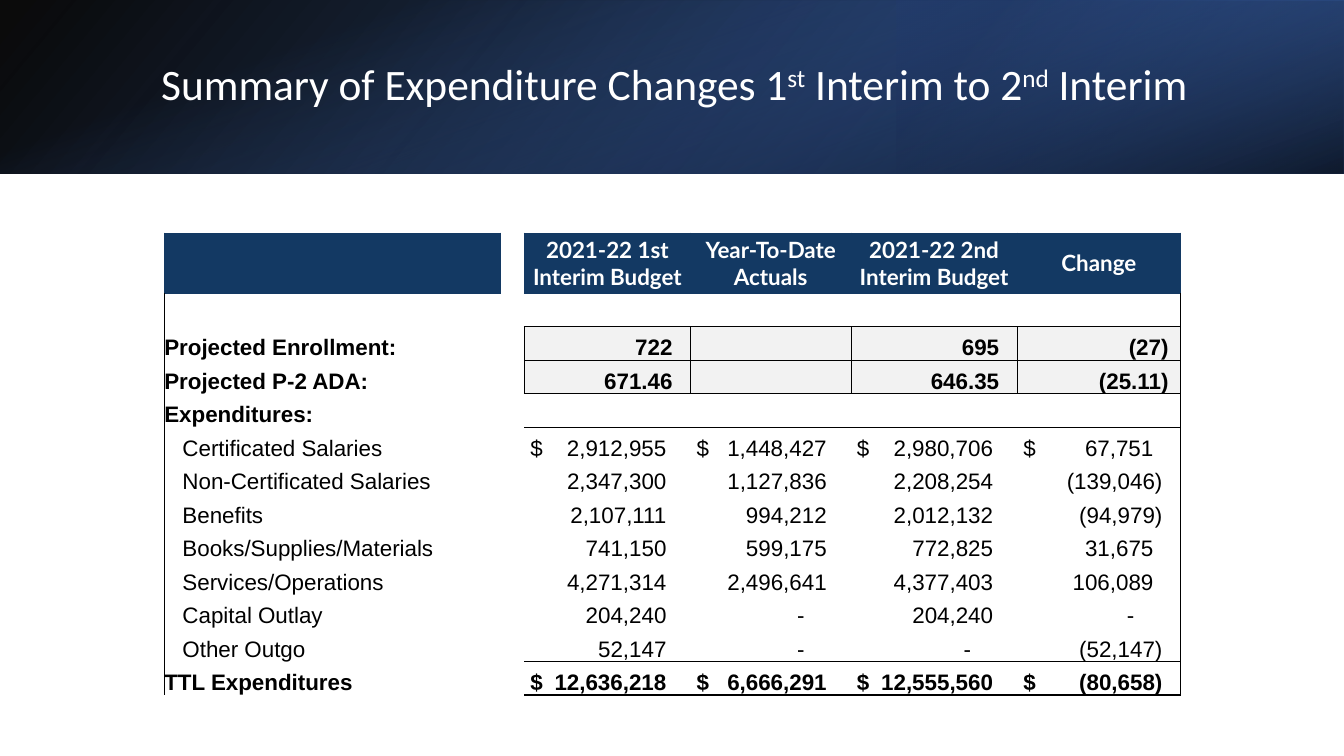
import dataclasses

import pptx
import pptx.dml.color
import pptx.enum.shapes
import pptx.enum.text
import pptx.oxml
import pptx.oxml.ns
import pptx.util

Inches = pptx.util.Inches
ALIGN = pptx.enum.text.PP_ALIGN
ANCHOR = pptx.enum.text.MSO_ANCHOR
NS = pptx.oxml.ns.nsdecls("a")


@dataclasses.dataclass
class Theme:
    navy: str = "133963"
    white: str = "FFFFFF"
    black: str = "000000"
    grey: str = "F2F2F2"
    title_font: str = "Calibri"
    header_font: str = "Lato"
    body_font: str = "Arial"
    title_size: float = 31
    table_size: float = 16
    thin: float = 0.5
    thick: float = 2


COLUMNS = [3.33, 0.24, 1.65, 1.59, 1.65, 1.62]
HEADERS = ["", "", "2021-22 1st Interim Budget", "Year-To-Date Actuals",
           "2021-22 2nd Interim Budget", "Change"]
ROWS = [
    ["", "", "", "", ""],
    ["Projected Enrollment:", "722", "", "695", "(27)"],
    ["Projected P-2 ADA:", "671.46", "", "646.35", "(25.11)"],
    ["Expenditures:", "", "", "", ""],
    ["Certificated Salaries", "$\t2,912,955", "$\t1,448,427", "$\t2,980,706", "$\t67,751"],
    ["Non-Certificated Salaries", "2,347,300", "1,127,836", "2,208,254", "(139,046)"],
    ["Benefits", "2,107,111", "994,212", "2,012,132", "(94,979)"],
    ["Books/Supplies/Materials", "741,150", "599,175", "772,825", "31,675"],
    ["Services/Operations", "4,271,314", "2,496,641", "4,377,403", "106,089"],
    ["Capital Outlay", "204,240", "-", "204,240", "-"],
    ["Other Outgo", "52,147", "-", "-", "(52,147)"],
    ["TTL Expenditures", "$\t12,636,218", "$\t6,666,291", "$\t12,555,560", "$\t(80,658)"],
]
BOXED_ROWS = (2, 3)
DETAIL_ROWS = range(5, 12)
TOTAL_ROW = len(ROWS)
DOLLAR_INSET = 0.06


def write(tf, text, size, font, color, bold=False, align=ALIGN.LEFT, spacing=None, tab=None):
    """Fill the first paragraph; parts between carets become superscript."""
    p = tf.paragraphs[0]
    p.alignment = align
    if spacing:
        p.line_spacing = spacing
    if tab:
        p._p.get_or_add_pPr().append(pptx.oxml.parse_xml(
            f'<a:tabLst {NS}><a:tab pos="{Inches(tab)}" algn="r"/></a:tabLst>'))
    for i, part in enumerate(text.split("^")):
        r = p.add_run()
        r.text = part
        r.font.size = pptx.util.Pt(size)
        r.font.name = font
        r.font.bold = bold
        r.font.color.rgb = pptx.dml.color.RGBColor.from_string(color)
        if i % 2:
            r._r.get_or_add_rPr().set("baseline", "30000")


def number_inset(text, row, col):
    """Right margin that lines digits up as in accounting format."""
    negative = text.endswith(")")
    if row in BOXED_ROWS:
        return 0.12 if negative else 0.18
    if text == "-":
        return 0.46
    if negative:
        return 0.18
    return 0.27 if col == len(COLUMNS) - 1 else 0.24


def cell_borders(row, col, th):
    """Map each bordered side of a cell to its colour and width."""
    thin = (th.black, th.thin)
    if row == 0:
        return dict.fromkeys("LR" if col == 1 else "LRTB", (th.navy, th.thin))
    if col == 0:
        return {"L": thin}
    if col == 1:
        return {"R": thin} if row in BOXED_ROWS else {}
    sides = {}
    if row in BOXED_ROWS:
        sides = dict.fromkeys("LRTB", thin)
    if row == 1:
        sides["T"] = (th.navy, th.thin)
    if row in (1, TOTAL_ROW - 1):
        sides["B"] = thin
    if row in (4, TOTAL_ROW):
        sides["T"] = thin
    if row == TOTAL_ROW:
        sides["B"] = (th.black, th.thick)
    if col == len(COLUMNS) - 1:
        sides["R"] = thin
    return sides


class SlideBuilder:
    def __init__(self, slide, theme):
        self.slide, self.theme = slide, theme

    def gradient(self, left, top, width, height, stops, angle, rotation=0, flip=False):
        """Rectangle with stops given as (position %, colour, opacity %)."""
        sp = self.slide.shapes.add_shape(
            pptx.enum.shapes.MSO_SHAPE.RECTANGLE,
            Inches(left), Inches(top), Inches(width), Inches(height))
        sp.shadow.inherit = False
        sp.line.fill.background()
        sp.rotation = rotation
        spPr = sp._element.spPr
        if flip:
            spPr.xfrm.set("flipH", "1")
        gs = "".join(
            f'<a:gs pos="{pos * 1000}"><a:srgbClr val="{color}">'
            f'<a:alpha val="{alpha * 1000}"/></a:srgbClr></a:gs>'
            for pos, color, alpha in stops)
        spPr.find(pptx.oxml.ns.qn("a:prstGeom")).addnext(pptx.oxml.parse_xml(
            f'<a:gradFill {NS} rotWithShape="1"><a:gsLst>{gs}</a:gsLst>'
            f'<a:lin ang="{angle * 60000}" scaled="0"/></a:gradFill>'))

    def title(self, left, top, width, height, text):
        th = self.theme
        box = self.slide.shapes.add_textbox(
            Inches(left), Inches(top), Inches(width), Inches(height))
        tf = box.text_frame
        tf.word_wrap = True
        tf.vertical_anchor = ANCHOR.MIDDLE
        write(tf, text, th.title_size, th.title_font, th.white, spacing=0.9)

    def table(self, left, top, height, header_height):
        frame = self.slide.shapes.add_table(
            len(ROWS) + 1, len(COLUMNS), Inches(left), Inches(top),
            Inches(sum(COLUMNS)), Inches(height))
        table = frame.table
        table.first_row = table.horz_banding = False
        style = table._tbl.tblPr.find(pptx.oxml.ns.qn("a:tableStyleId"))
        style.text = "{2D5ABB26-0587-4C30-8999-92F81FD0307C}"
        for column, width in zip(table.columns, COLUMNS):
            column.width = Inches(width)
        body_height = (height - header_height) / len(ROWS)
        grid = [HEADERS] + [[row[0], "", *row[1:]] for row in ROWS]
        for i, texts in enumerate(grid):
            table.rows[i].height = Inches(body_height if i else header_height)
            for j, text in enumerate(texts):
                self.cell(table.cell(i, j), text, i, j)

    def cell(self, cell, text, row, col):
        th = self.theme
        cell.margin_left = cell.margin_right = cell.margin_top = cell.margin_bottom = 0
        cell.vertical_anchor = ANCHOR.BOTTOM if row else ANCHOR.MIDDLE
        self.borders(cell, cell_borders(row, col, th))
        fill = None
        if row == 0:
            fill = th.white if col == 1 else th.navy
        elif row in BOXED_ROWS and col > 1:
            fill = th.grey
        if fill:
            cell.fill.solid()
            cell.fill.fore_color.rgb = pptx.dml.color.RGBColor.from_string(fill)
        else:
            cell.fill.background()

        fmt = dict(size=th.table_size, font=th.body_font, color=th.black,
                   bold=row not in DETAIL_ROWS)
        if row == 0:
            fmt.update(font=th.header_font, color=th.white, align=ALIGN.CENTER)
        elif col == 0:
            cell.margin_left = Inches(0.18 if row in DETAIL_ROWS else 0)
        elif "\t" in text:
            cell.margin_left = Inches(DOLLAR_INSET)
            fmt["tab"] = COLUMNS[col] - number_inset(text, row, col) - DOLLAR_INSET
        elif text:
            cell.margin_right = Inches(number_inset(text, row, col))
            fmt["align"] = ALIGN.RIGHT
        if text:
            write(cell.text_frame, text, **fmt)

    def borders(self, cell, sides):
        tcPr = cell._tc.get_or_add_tcPr()
        for side in "LRTB":
            if side in sides:
                color, width = sides[side]
                tcPr.append(pptx.oxml.parse_xml(
                    f'<a:ln{side} {NS} w="{pptx.util.Pt(width)}"><a:solidFill>'
                    f'<a:srgbClr val="{color}"/></a:solidFill></a:ln{side}>'))


def main():
    prs = pptx.Presentation()
    prs.slide_width, prs.slide_height = Inches(13.33), Inches(7.5)
    s = SlideBuilder(prs.slides.add_slide(prs.slide_layouts[6]), Theme())
    s.gradient(0, 0, 13.33, 1.72, [(0, "000000", 96), (100, "2F5597", 100)], 140, flip=True)
    s.gradient(8.89, 0, 4.44, 1.72, [(19, "203864", 68), (100, "4472C4", 79)], 320,
               rotation=180, flip=True)
    s.gradient(5.8, -5.8, 1.72, 13.33, [(23, "4472C4", 0), (99, "000000", 74)], 340,
               rotation=90)
    s.title(1.5, 0.38, 10.98, 0.96,
            "Summary of Expenditure Changes 1^st^ Interim to 2^nd^ Interim")
    s.table(1.63, 2.31, height=4.59, header_height=0.6)
    prs.save("out.pptx")


if __name__ == "__main__":
    main()
